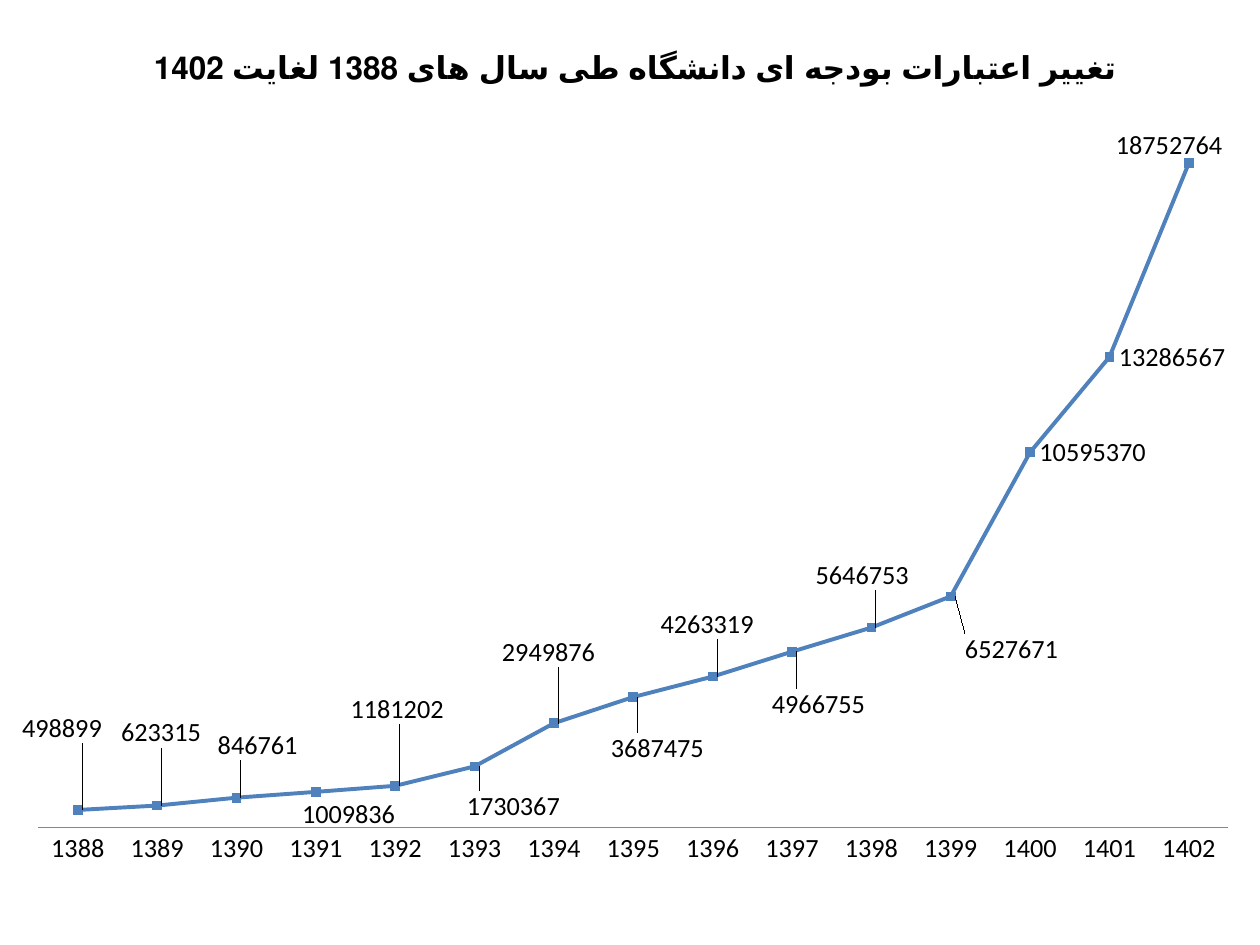
from lxml.etree import SubElement
from pptx import Presentation
from pptx.chart.data import CategoryChartData
from pptx.dml.color import RGBColor
from pptx.enum.chart import XL_CHART_TYPE, XL_LABEL_POSITION, XL_MARKER_STYLE, XL_TICK_MARK
from pptx.oxml.ns import qn
from pptx.util import Pt

FONT = "Calibri"
TITLE = "تغییر اعتبارات بودجه ای دانشگاه طی سال های 1388 لغایت 1402"
BUDGETS = [498899, 623315, 846761, 1009836, 1181202, 1730367, 2949876, 3687475,
           4263319, 4966755, 5646753, 6527671, 10595370, 13286567, 18752764]
YEARS = [str(1388 + index) for index in range(len(BUDGETS))]
LABEL_SHIFTS = {
    0: (-37, -47), 1: (-26, -42), 2: (-16, -30), 3: (-13, 13), 4: (-31, -44),
    5: (-10, 23), 6: (-35, -41), 7: (-18, 29), 8: (-35, -30), 9: (-17, 30),
    10: (-37, -30), 11: (3, 30), 14: (-47, -10),
}


def rgb(value):
    """Turn a hex string into a colour."""
    return RGBColor.from_string(value)


def format_font(font, size=15, color="000000", bold=False):
    """Apply the common font settings."""
    font.name = FONT
    font.size = Pt(size)
    font.bold = bold
    font.color.rgb = rgb(color)


def write_text(text_frame, text, rtl=False, **font_format):
    """Write one formatted paragraph into a text frame."""
    paragraph = text_frame.paragraphs[0]
    run = paragraph.add_run()
    run.text = text
    format_font(run.font, **font_format)
    if rtl:
        paragraph._p.get_or_add_pPr().set("rtl", "1")


def manual_layout(**settings):
    """Build a manual layout element from its settings."""
    layout = SubElement(SubElement(CHART_ROOT, qn("c:layout")), qn("c:manualLayout"))
    for name, value in settings.items():
        SubElement(layout, qn(f"c:{name}")).set("val", str(value))
    return layout.getparent()


def place_plot(chart, x, y, w, h):
    """Fix the inner plot area as fractions of the chart."""
    plot_area = chart._chartSpace.chart.plotArea
    for old in plot_area.findall(qn("c:layout")):
        plot_area.remove(old)
    plot_area.insert(0, manual_layout(
        layoutTarget="inner", xMode="edge", yMode="edge", x=x, y=y, w=w, h=h))


def style_axes(chart):
    """Show the year axis and hide the value axis."""
    years = chart.category_axis
    years.major_tick_mark = XL_TICK_MARK.NONE
    years.format.line.color.rgb = rgb("868686")
    format_font(years.tick_labels.font)
    values = chart.value_axis
    values.minimum_scale = 0
    values.maximum_scale = 20000000
    values.has_major_gridlines = False
    values.visible = False


def style_series(series, color):
    """Format the line and its square markers."""
    series.smooth = False
    series.format.line.color.rgb = rgb(color)
    series.format.line.width = Pt(2.25)
    series.marker.style = XL_MARKER_STYLE.SQUARE
    series.marker.size = 5
    series.marker.format.fill.solid()
    series.marker.format.fill.fore_color.rgb = rgb(color)
    series.marker.format.line.color.rgb = rgb(color)


def add_labels(series, width, height):
    """Label every point and shift the crowded labels by points."""
    for index, (shift_x, shift_y) in LABEL_SHIFTS.items():
        label = series.points[index].data_label
        label.position = XL_LABEL_POSITION.RIGHT
        format_font(label.font)
        element = label._dLbl
        element.find(qn("c:idx")).addnext(manual_layout(
            x=round(shift_x / width, 3), y=round(shift_y / height, 3)))
    labels = series.data_labels
    labels.show_value = True
    labels.position = XL_LABEL_POSITION.RIGHT
    format_font(labels.font)


def add_budget_chart(slide, left, top, width, height):
    """Place the budget line chart in the given box."""
    global CHART_ROOT
    data = CategoryChartData(number_format="0")
    data.categories = YEARS
    data.add_series("Series 1", BUDGETS)
    chart = slide.shapes.add_chart(
        XL_CHART_TYPE.LINE_MARKERS, Pt(left), Pt(top), Pt(width), Pt(height), data).chart
    CHART_ROOT = chart._chartSpace
    format_font(chart.font)
    chart.has_legend = False
    chart.has_title = True
    write_text(chart.chart_title.text_frame, TITLE, rtl=True, size=18, bold=True)
    chart.chart_title.include_in_layout = False
    chart.plots[0].vary_by_categories = False
    place_plot(chart, 0.014, 0.11, 0.969, 0.794)
    style_axes(chart)
    series = chart.plots[0].series[0]
    style_series(series, "4F81BD")
    add_labels(series, width, height)


def main():
    """Build and save the presentation."""
    presentation = Presentation()
    presentation.slide_width = Pt(720)
    presentation.slide_height = Pt(540)
    slide = presentation.slides.add_slide(presentation.slide_layouts[6])
    add_budget_chart(slide, 12, 12, 702, 510)
    presentation.save("out.pptx")


if __name__ == "__main__":
    main()
